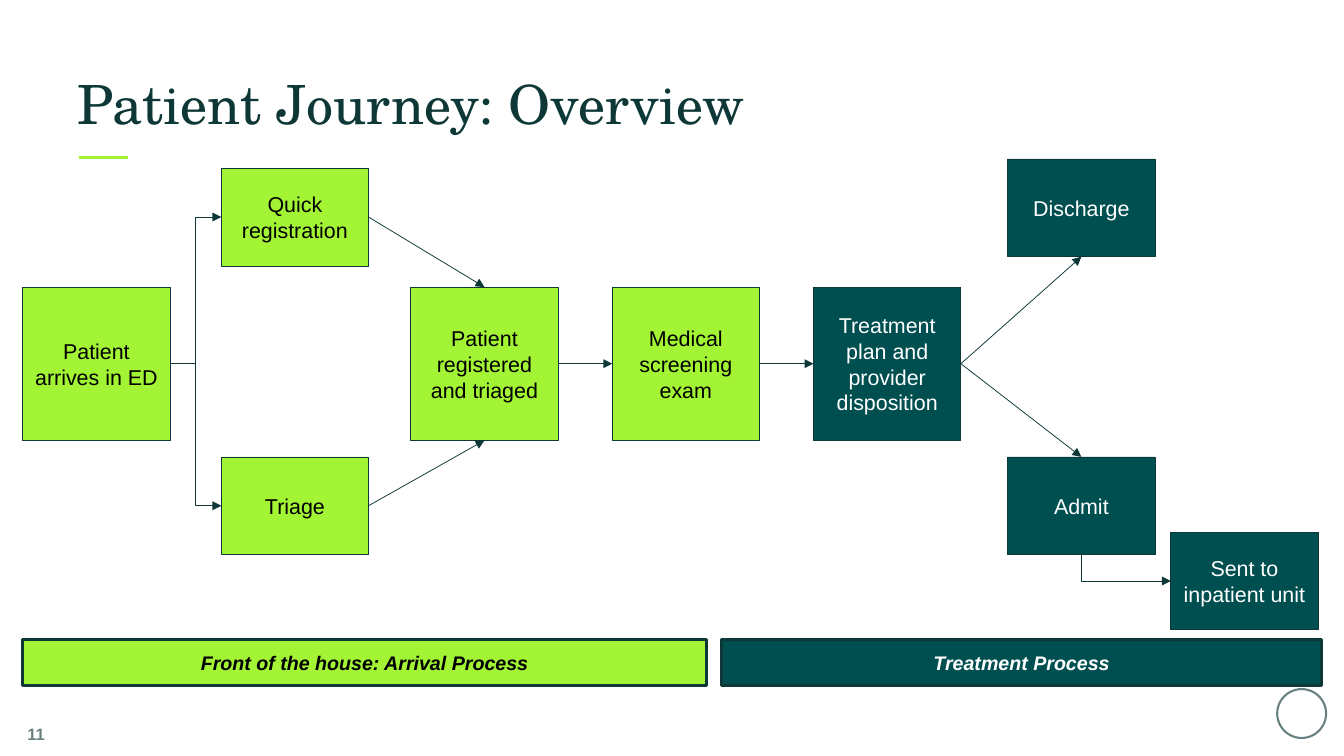
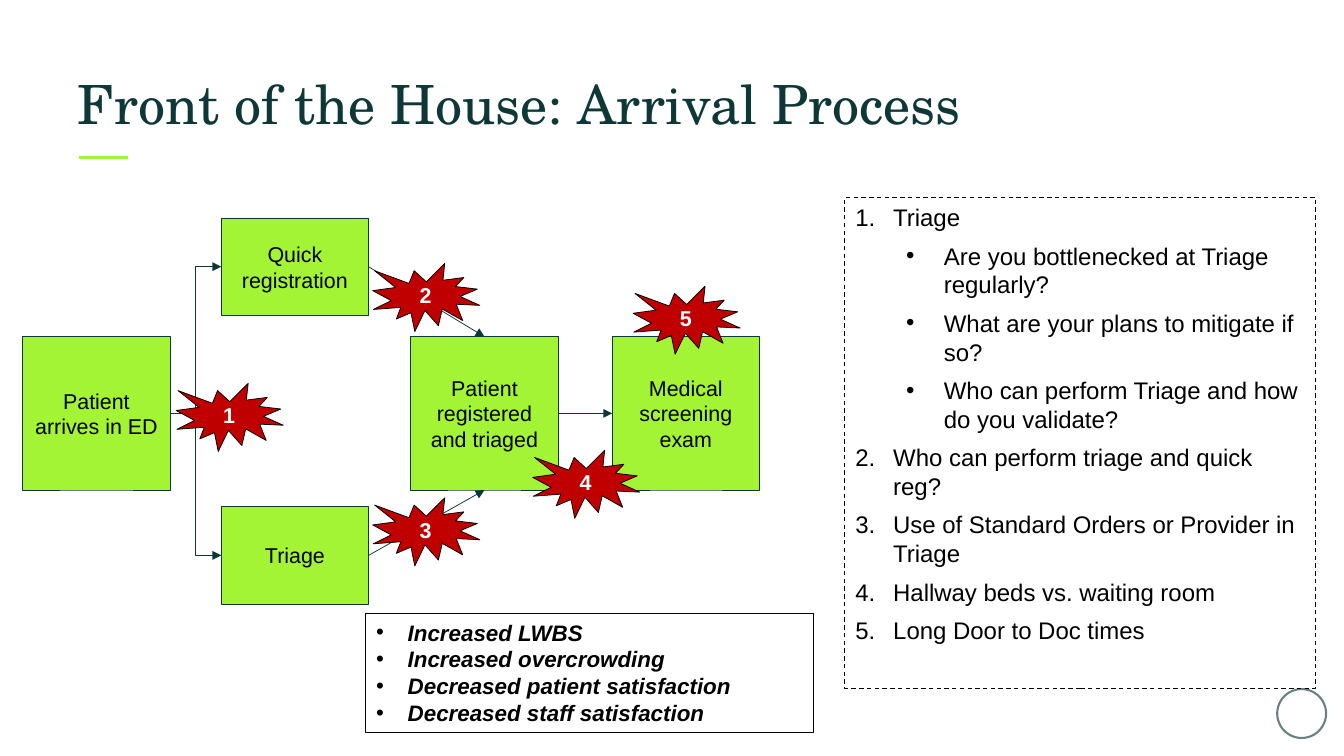
from dataclasses import dataclass
from typing import Any, NamedTuple

from pptx import Presentation
from pptx.dml.color import RGBColor
from pptx.enum.dml import MSO_LINE
from pptx.enum.shapes import MSO_CONNECTOR, MSO_SHAPE
from pptx.enum.text import MSO_ANCHOR, MSO_AUTO_SIZE, PP_ALIGN
from pptx.oxml.ns import qn
from pptx.util import Pt
from lxml import etree

RECT, OVAL, BURST = MSO_SHAPE.RECTANGLE, MSO_SHAPE.OVAL, MSO_SHAPE.EXPLOSION1
STRAIGHT, ELBOW = MSO_CONNECTOR.STRAIGHT, MSO_CONNECTOR.ELBOW
LEFT, CENTER, RIGHT = PP_ALIGN.LEFT, PP_ALIGN.CENTER, PP_ALIGN.RIGHT
ANCHOR_TOP, ANCHOR_MIDDLE, ANCHOR_BOTTOM = MSO_ANCHOR.TOP, MSO_ANCHOR.MIDDLE, MSO_ANCHOR.BOTTOM
NO_AUTO_SIZE, DASH = MSO_AUTO_SIZE.NONE, MSO_LINE.DASH

# Shared palette, fonts and measures
LIME, TEAL, INK, GREY, RED = "A2F434", "004F50", "0E3837", "6A8080", "C00000"
BLACK, WHITE = "000000", "FFFFFF"
SANS, SERIF = "Arial", "TeX Gyre Schola"
STEP_WIDTH, TALL, SHORT = 98.2, 102.2, 65.1
MIDDLE_ROW, UPPER_ROW, LOWER_ROW = 191.4, 112.2, 304.6
ARRIVAL_SHIFT = 33.1
TOP_SIDE, LEFT_SIDE, BOTTOM_SIDE, RIGHT_SIDE = range(4)


class Area(NamedTuple):
    left: float
    top: float
    width: float
    height: float

    def lengths(self) -> list[int]:
        return [Pt(value) for value in self]


@dataclass
class TextStyle:
    size: float
    color: str = BLACK
    font: str = SANS
    bold: bool = False
    italic: bool = False
    align: Any = CENTER
    anchor: Any = ANCHOR_MIDDLE
    inset: bool = True
    space_after: float = 0


@dataclass
class Look:
    fill: str | None = None
    line: str = INK
    weight: float = 0.5
    dash: Any = None


@dataclass
class Step:
    name: str
    text: str
    left: float
    top: float
    height: float
    fill: str = LIME


class Link(NamedTuple):
    start: str
    start_side: int
    end: str
    end_side: int
    kind: Any = STRAIGHT


class Item(NamedTuple):
    text: str
    marker: str
    level: int = 0


TITLE = TextStyle(36, INK, SERIF, align=LEFT, anchor=ANCHOR_BOTTOM, inset=False)
PAGE_NUMBER = TextStyle(11, GREY, bold=True, align=RIGHT, inset=False)
QUESTIONS = TextStyle(16, align=LEFT, anchor=ANCHOR_TOP, space_after=6.4)
EFFECTS = TextStyle(14.9, bold=True, italic=True, align=LEFT, anchor=ANCHOR_TOP)
BADGE = TextStyle(14.3, WHITE, bold=True)

# Patient flow
ARRIVAL_STEPS = [
    Step("arrive", "Patient arrives in ED", 15.2, MIDDLE_ROW, TALL),
    Step("register", "Quick registration", 147.5, UPPER_ROW, SHORT),
    Step("triage", "Triage", 147.5, LOWER_ROW, SHORT),
    Step("ready", "Patient registered and triaged", 273.8, MIDDLE_ROW, TALL),
    Step("exam", "Medical screening exam", 408, MIDDLE_ROW, TALL),
]
TREATMENT_STEPS = [
    Step("plan", "Treatment plan and provider disposition", 542.2, MIDDLE_ROW, TALL, TEAL),
    Step("discharge", "Discharge", 671.6, 106, SHORT, TEAL),
    Step("admit", "Admit", 671.6, LOWER_ROW, SHORT, TEAL),
    Step("inpatient", "Sent to inpatient unit", 780.3, 354.8, SHORT, TEAL),
]
ARRIVAL_LINKS = [
    Link("arrive", RIGHT_SIDE, "register", LEFT_SIDE, ELBOW),
    Link("arrive", RIGHT_SIDE, "triage", LEFT_SIDE, ELBOW),
    Link("ready", RIGHT_SIDE, "exam", LEFT_SIDE),
    Link("register", RIGHT_SIDE, "ready", TOP_SIDE),
    Link("triage", RIGHT_SIDE, "ready", BOTTOM_SIDE),
]
TREATMENT_LINKS = [
    Link("exam", RIGHT_SIDE, "plan", LEFT_SIDE),
    Link("plan", RIGHT_SIDE, "discharge", BOTTOM_SIDE),
    Link("plan", RIGHT_SIDE, "admit", TOP_SIDE),
    Link("admit", BOTTOM_SIDE, "inpatient", LEFT_SIDE, ELBOW),
]
PHASES = [
    ("Front of the house: Arrival Process", Area(15.2, 426.2, 455.6, 31), LIME),
    ("Treatment Process", Area(480.8, 426.2, 400, 31), TEAL),
]

# Arrival notes
QUESTION_ITEMS = [
    Item("Triage", "number"),
    Item("Are you bottlenecked at Triage regularly?", "•", 1),
    Item("What are your plans to mitigate if so?", "•", 1),
    Item("Who can perform Triage and how do you validate?", "•", 1),
    Item("Who can perform triage and quick reg?", "number"),
    Item("Use of Standard Orders or Provider in Triage", "number"),
    Item("Hallway beds vs. waiting room", "number"),
    Item("Long Door to Doc times", "number"),
]
EFFECT_ITEMS = [Item(text, "•") for text in (
    "Increased LWBS", "Increased overcrowding",
    "Decreased patient satisfaction", "Decreased staff satisfaction")]
BADGE_SPOTS = [(117.4, 255.6), (248.4, 175.7), (248.4, 331.9), (355, 300.2), (421.9, 190.8)]


def rgb(color: str) -> RGBColor:
    return RGBColor.from_string(color)


def set_format(target: Any, values: dict[str, Any]) -> None:
    for name, value in values.items():
        setattr(target, name, value)


def text_on(fill: str) -> str:
    return WHITE if fill == TEAL else BLACK


def add_marker(para: Any, item: Item, indent: float) -> None:
    properties = para._p.get_or_add_pPr()
    properties.set("marL", str(Pt(indent + 33.8 * item.level)))
    properties.set("indent", str(-Pt(indent)))
    etree.SubElement(properties, qn("a:buFont"), typeface=SANS)
    if item.marker == "number":
        etree.SubElement(properties, qn("a:buAutoNum"), type="arabicPeriod")
    else:
        etree.SubElement(properties, qn("a:buChar"), char=item.marker)


def write(box: Any, items: list[Item], style: TextStyle, indent: float = 0) -> None:
    frame = box.text_frame
    set_format(frame, {"word_wrap": True, "auto_size": NO_AUTO_SIZE,
                       "vertical_anchor": style.anchor})
    if not style.inset:
        set_format(frame, {f"margin_{side}": 0 for side in ("left", "right", "top", "bottom")})
    for index, item in enumerate(items):
        para = frame.paragraphs[0] if index == 0 else frame.add_paragraph()
        set_format(para, {"alignment": style.align, "level": item.level,
                          "space_after": Pt(style.space_after)})
        if item.marker:
            add_marker(para, item, indent)
        span = para.add_run()
        span.text = item.text
        set_format(span.font, {"name": style.font, "size": Pt(style.size),
                               "bold": style.bold, "italic": style.italic})
        span.font.color.rgb = rgb(style.color)


def add_text(page: Any, text: str, area: Area, style: TextStyle) -> None:
    write(page.shapes.add_textbox(*area.lengths()), [Item(text, "")], style)


def add_box(page: Any, kind: Any, area: Area, look: Look) -> Any:
    box = page.shapes.add_shape(kind, *area.lengths())
    box.shadow.inherit = False
    if look.fill:
        box.fill.solid()
        box.fill.fore_color.rgb = rgb(look.fill)
    else:
        box.fill.background()
    box.line.color.rgb = rgb(look.line)
    set_format(box.line, {"width": Pt(look.weight), "dash_style": look.dash})
    return box


def add_line(page: Any, kind: Any, ends: tuple[float, ...], color: str, weight: float) -> Any:
    line = page.shapes.add_connector(kind, *(Pt(value) for value in ends))
    line.line.color.rgb = rgb(color)
    line.line.width = Pt(weight)
    etree.SubElement(line._element.spPr, qn("a:effectLst"))
    return line


def make_single_bend(arrow: Any) -> None:
    """Turn an elbow into one that leaves downward and arrives from the left."""
    width, height = arrow.width, arrow.height
    set_format(arrow, {"left": arrow.left + (width - height) // 2,
                       "top": arrow.top + (height - width) // 2,
                       "width": height, "height": width})
    properties = arrow._element.spPr
    frame = properties.find(qn("a:xfrm"))
    frame.set("rot", "16200000")
    frame.set("flipH", "1")
    properties.find(qn("a:prstGeom")).set("prst", "bentConnector2")


def add_flow(page: Any, steps: list[Step], links: list[Link], shift: float = 0) -> None:
    boxes = {}
    for step in steps:
        area = Area(step.left, step.top + shift, STEP_WIDTH, step.height)
        boxes[step.name] = add_box(page, RECT, area, Look(step.fill))
        write(boxes[step.name], [Item(step.text, "")], TextStyle(14.3, text_on(step.fill)))
    for link in links:
        arrow = add_line(page, link.kind, (0, 0, 0, 0), INK, 0.5)
        arrow.begin_connect(boxes[link.start], link.start_side)
        arrow.end_connect(boxes[link.end], link.end_side)
        etree.SubElement(arrow.line._get_or_add_ln(), qn("a:tailEnd"), type="triangle")
        if link.kind == ELBOW and link.start_side == BOTTOM_SIDE:
            make_single_bend(arrow)


def add_page(deck: Any, title: str) -> Any:
    page = deck.slides.add_slide(deck.slide_layouts[6])
    add_box(page, OVAL, Area(851.2, 459.4, 32.6, 32.6), Look(line=GREY, weight=1.4))
    add_line(page, STRAIGHT, (52.6, 104.8, 85.4, 104.8), LIME, 2)
    add_text(page, title, Area(52, 36, 792, 54), TITLE)
    return page


def build_overview(deck: Any) -> None:
    page = add_page(deck, "Patient Journey: Overview")
    add_flow(page, ARRIVAL_STEPS + TREATMENT_STEPS, ARRIVAL_LINKS + TREATMENT_LINKS)
    for text, area, fill in PHASES:
        bar = add_box(page, RECT, area, Look(fill, weight=2.25))
        style = TextStyle(13.1, text_on(fill), bold=True, italic=True,
                          inset=False, space_after=3.7)
        write(bar, [Item(text, "")], style)
    add_text(page, "11", Area(0, 474, 30, 30), PAGE_NUMBER)


def build_arrival(deck: Any) -> None:
    page = add_page(deck, "Front of the House: Arrival Process")
    panel = add_box(page, RECT, Area(563, 131.6, 314, 327.2), Look(None, BLACK, 0.75, DASH))
    write(panel, QUESTION_ITEMS, QUESTIONS, 25.2)
    effects = add_box(page, RECT, Area(243.6, 409, 298.8, 79.6), Look(None, BLACK, 0.75))
    write(effects, EFFECT_ITEMS, EFFECTS, 21)
    add_flow(page, ARRIVAL_STEPS, ARRIVAL_LINKS, ARRIVAL_SHIFT)
    # Numbered trouble spots
    for number, (left, top) in enumerate(BADGE_SPOTS, start=1):
        badge = add_box(page, BURST, Area(left, top, 71.4, 45.4), Look(RED, BLACK))
        write(badge, [Item(str(number), "")], BADGE)


def main() -> None:
    deck = Presentation()
    set_format(deck, {"slide_width": Pt(895.68), "slide_height": Pt(504)})
    build_overview(deck)
    build_arrival(deck)
    deck.save("out.pptx")


if __name__ == "__main__":
    main()
